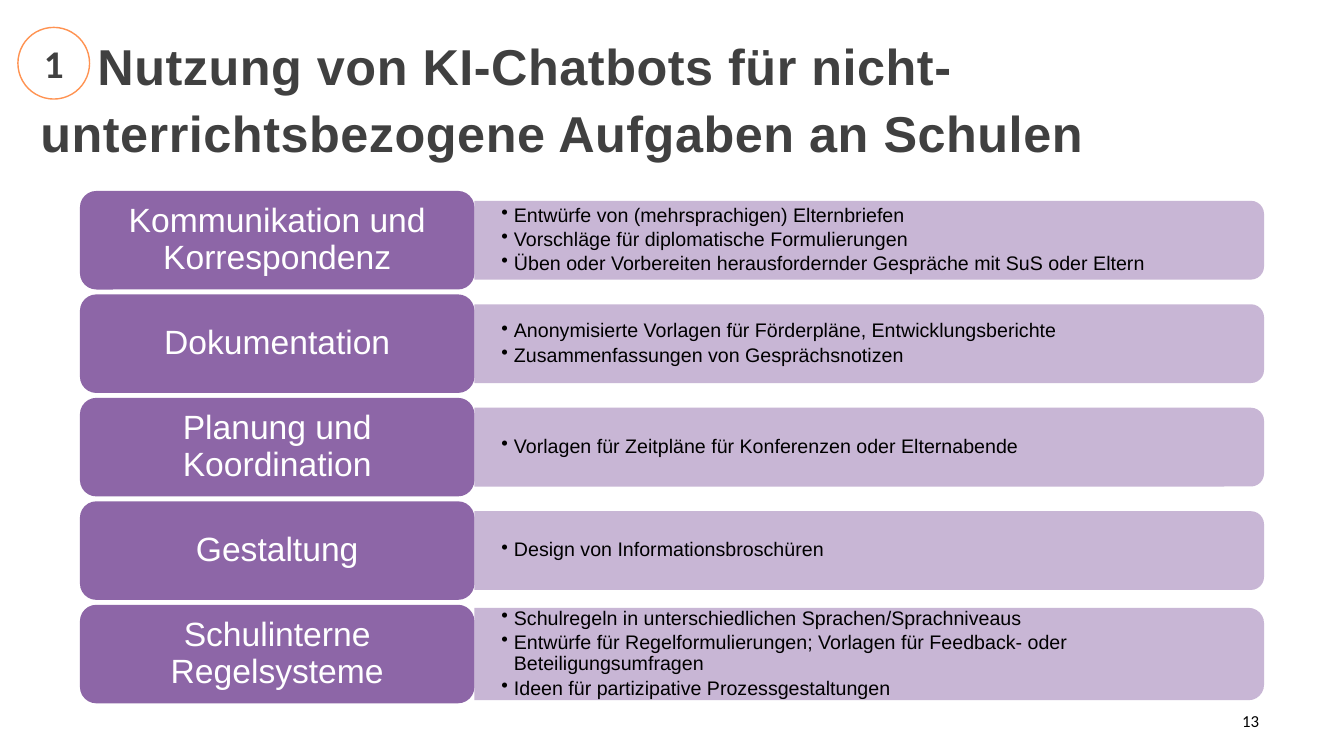
from dataclasses import dataclass

from lxml import etree
from pptx import Presentation
from pptx.dml.color import RGBColor
from pptx.enum.shapes import MSO_SHAPE
from pptx.enum.text import MSO_ANCHOR, MSO_AUTO_SIZE, PP_ALIGN
from pptx.oxml.ns import qn
from pptx.util import Pt

LEFT, CENTER, RIGHT = PP_ALIGN.LEFT, PP_ALIGN.CENTER, PP_ALIGN.RIGHT
MIDDLE, NO_AUTOFIT = MSO_ANCHOR.MIDDLE, MSO_AUTO_SIZE.NONE
ROUNDED, TOP_ROUNDED = MSO_SHAPE.ROUNDED_RECTANGLE, MSO_SHAPE.ROUND_2_SAME_RECTANGLE
OVAL = MSO_SHAPE.OVAL


@dataclass(frozen=True)
class Theme:
    dark: str = "404040"
    black: str = "000000"
    white: str = "FFFFFF"
    purple: str = "8D66A7"
    lilac: str = "C3AFD1"
    orange: str = "FF9352"
    text_font: str = "Arial"
    number_font: str = "Calibri"
    title_size: int = 36
    badge_size: int = 28
    label_size: int = 24
    bullet_size: int = 14
    page_size: int = 12


TITLE = "Nutzung von KI-Chatbots für nicht-unterrichtsbezogene Aufgaben an Schulen"
BAR_HEIGHT, TALL_BAR_HEIGHT = 56.3, 66
TASKS = [
    ("Kommunikation und Korrespondenz", BAR_HEIGHT, [
        "Entwürfe von (mehrsprachigen) Elternbriefen",
        "Vorschläge für diplomatische Formulierungen",
        "Üben oder Vorbereiten herausfordernder Gespräche mit SuS oder Eltern"]),
    ("Dokumentation", BAR_HEIGHT, [
        "Anonymisierte Vorlagen für Förderpläne, Entwicklungsberichte",
        "Zusammenfassungen von Gesprächsnotizen"]),
    ("Planung und Koordination", BAR_HEIGHT, [
        "Vorlagen für Zeitpläne für Konferenzen oder Elternabende"]),
    ("Gestaltung", BAR_HEIGHT, ["Design von Informationsbroschüren"]),
    ("Schulinterne Regelsysteme", TALL_BAR_HEIGHT, [
        "Schulregeln in unterschiedlichen Sprachen/Sprachniveaus",
        "Entwürfe für Regelformulierungen; Vorlagen für Feedback- oder Beteiligungsumfragen",
        "Ideen für partizipative Prozessgestaltungen"]),
]
FIRST_TOP, ROW_STEP = 136.4, 73.9
LABEL_LEFT, LABEL_WIDTH, LABEL_HEIGHT = 57.1, 281.8, 70.4
BAR_LEFT, BAR_WIDTH = LABEL_LEFT + LABEL_WIDTH, 564


def apply(target, values):
    for name, value in values.items():
        setattr(target, name, value)


class SlideBuilder:
    def __init__(self, slide, theme):
        self.slide = slide
        self.theme = theme

    def set_text(self, shape, lines, size, color, font=None, bold=False, margins=(7.2, 3.6),
                 **paragraph_format):
        """Fill a shape with one paragraph per line, all in one style."""
        frame = shape.text_frame
        side, top = (Pt(margin) for margin in margins)
        apply(frame, {"word_wrap": True, "auto_size": NO_AUTOFIT, "vertical_anchor": MIDDLE,
                      "margin_left": side, "margin_right": side,
                      "margin_top": top, "margin_bottom": top})
        frame.text = "\n".join(lines)
        for paragraph in frame.paragraphs:
            apply(paragraph, paragraph_format)
            for run in paragraph.runs:
                apply(run.font, {"name": font or self.theme.text_font, "size": Pt(size), "bold": bold})
                run.font.color.rgb = RGBColor.from_string(color)
        return frame

    def shape(self, kind, left, top, width, height, fill, line=None):
        shape = self.slide.shapes.add_shape(kind, Pt(left), Pt(top), Pt(width), Pt(height))
        shape.shadow.inherit = False
        shape.fill.solid()
        shape.fill.fore_color.rgb = RGBColor.from_string(fill)
        if line:
            shape.line.color.rgb = RGBColor.from_string(line)
            shape.line.width = Pt(1)
        else:
            shape.line.fill.background()
        return shape

    def text_box(self, left, top, width, height):
        return self.slide.shapes.add_textbox(Pt(left), Pt(top), Pt(width), Pt(height))

    def title(self, text):
        title = self.slide.shapes.title
        apply(title, {"left": Pt(21.6), "top": Pt(0), "width": Pt(938.4), "height": Pt(136)})
        frame = self.set_text(title, [text], self.theme.title_size, self.theme.dark, bold=True,
                              alignment=LEFT, line_spacing=Pt(48))
        paragraph = frame.paragraphs[0]
        # The first line starts to the right of the number badge.
        paragraph._p.get_or_add_pPr().set("indent", str(Pt(40.8)))
        paragraph.runs[0]._r.get_or_add_rPr().set("spc", "40")

    def bar(self, middle, height):
        """Draw a bar rounded on the right: a top-rounded shape turned by 90 degrees."""
        bar = self.shape(TOP_ROUNDED, BAR_LEFT + (BAR_WIDTH - height) / 2, middle - BAR_WIDTH / 2,
                         height, BAR_WIDTH, self.theme.lilac)
        bar.rotation = 90
        color = bar._element.spPr.find(qn("a:solidFill"))[0]
        etree.SubElement(color, qn("a:alpha")).set("val", "90000")

    def bullets(self, middle, height, lines):
        box = self.text_box(BAR_LEFT, middle - height / 2, BAR_WIDTH - 2.5, height)
        frame = self.set_text(box, lines, self.theme.bullet_size, self.theme.black, margins=(19.2, 9.6),
                              level=1, alignment=LEFT, line_spacing=0.9, space_after=Pt(2.1))
        for paragraph in frame.paragraphs:
            properties = paragraph._p.get_or_add_pPr()
            properties.set("marL", str(Pt(9)))
            properties.set("indent", str(Pt(-9)))
            etree.SubElement(properties, qn("a:buChar")).set("char", "•")

    def label(self, top, text):
        label = self.shape(ROUNDED, LABEL_LEFT, top, LABEL_WIDTH, LABEL_HEIGHT, self.theme.purple)
        self.set_text(label, [text], self.theme.label_size, self.theme.white,
                      alignment=CENTER, line_spacing=0.9)

    def badge(self, text):
        badge = self.shape(OVAL, 12.8, 19.6, 51.2, 51.2, self.theme.white, self.theme.orange)
        self.set_text(badge, [text], self.theme.badge_size, self.theme.dark,
                      self.theme.number_font, bold=True, alignment=CENTER)

    def page_number(self, text):
        box = self.text_box(690.5, 500.5, 216, 28.8)
        self.set_text(box, [text], self.theme.page_size, self.theme.black,
                      self.theme.number_font, alignment=RIGHT)


def main():
    presentation = Presentation()
    presentation.slide_width, presentation.slide_height = Pt(960), Pt(540)
    slide = presentation.slides.add_slide(presentation.slide_layouts.get_by_name("Title Only"))
    builder = SlideBuilder(slide, Theme())
    builder.title(TITLE)
    for row, (label, bar_height, lines) in enumerate(TASKS):
        top = FIRST_TOP + row * ROW_STEP
        middle = top + LABEL_HEIGHT / 2
        builder.bar(middle, bar_height)
        builder.bullets(middle, bar_height, lines)
        builder.label(top, label)
    builder.badge("1")
    builder.page_number("13")
    presentation.save("out.pptx")


if __name__ == "__main__":
    main()
